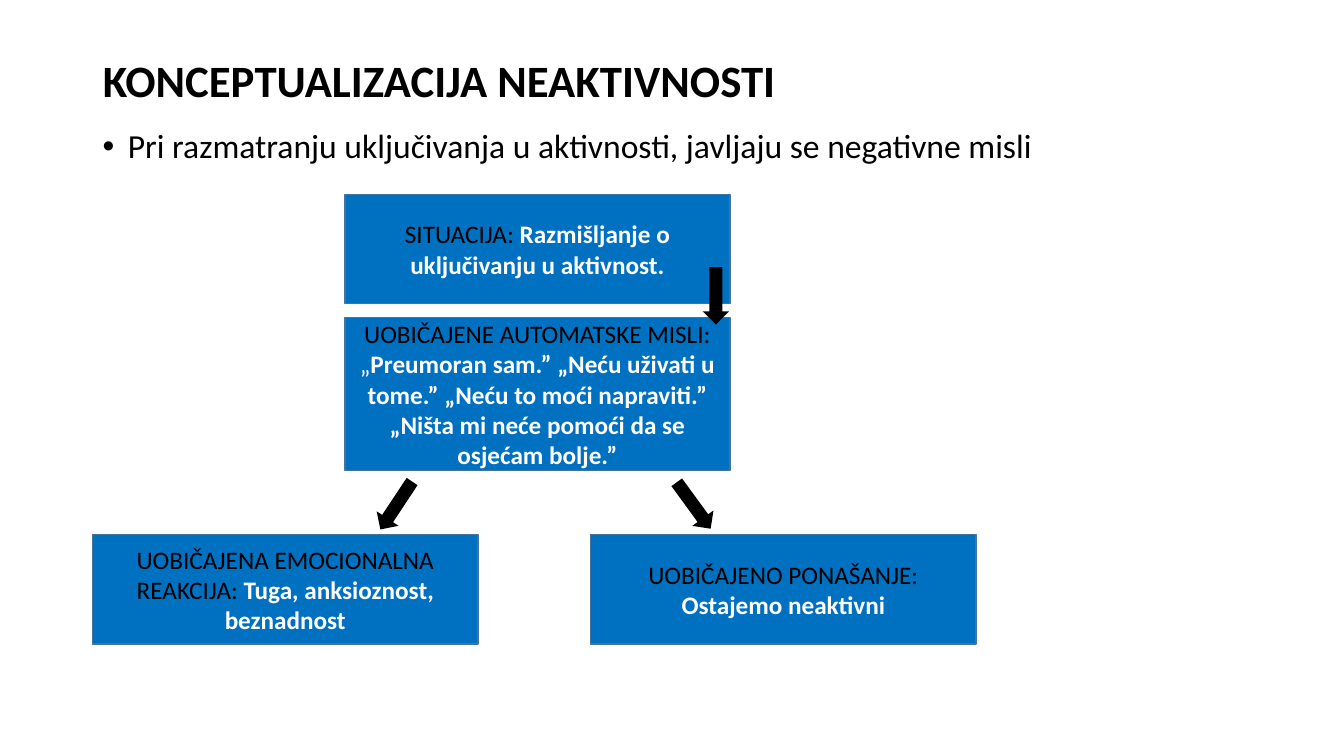
from lxml import etree
from pptx import Presentation
from pptx import util as u
from pptx.dml.color import RGBColor
from pptx.enum import shapes, text
from pptx.oxml.ns import qn

BLACK, WHITE, BLUE, EDGE = "000000", "FFFFFF", "0070C0", "43739E"


def colour(value):
    return RGBColor.from_string(value)


class Diagram:
    font_name = "Calibri"

    def __init__(self, presentation):
        self.column = presentation.slide_width / 100
        self.row = presentation.slide_height / 100
        self.slide = presentation.slides.add_slide(presentation.slide_layouts[5])

    def area(self, left, top, width, height):
        return (round(left * self.column), round(top * self.row),
                round(width * self.column), round(height * self.row))

    def style(self, paragraph, size, bold=False):
        font = paragraph.font
        font.name, font.size, font.bold = self.font_name, u.Pt(size), bold
        font.color.rgb = colour(BLACK)

    def title(self, words, *place):
        shape = self.slide.shapes.title
        shape.left, shape.top, shape.width, shape.height = self.area(*place)
        frame = shape.text_frame
        frame.text = words
        frame.auto_size = text.MSO_AUTO_SIZE.NONE
        frame.vertical_anchor = text.MSO_ANCHOR.MIDDLE
        paragraph = frame.paragraphs[0]
        paragraph.alignment = text.PP_ALIGN.LEFT
        paragraph.line_spacing = 0.9
        self.style(paragraph, 32, True)

    def bullet(self, words, *place):
        frame = self.slide.shapes.add_textbox(*self.area(*place)).text_frame
        frame.word_wrap = True
        frame.text = words
        paragraph = frame.paragraphs[0]
        paragraph.line_spacing = 0.9
        paragraph.space_before = u.Pt(10)
        self.style(paragraph, 24)
        properties = paragraph._p.get_or_add_pPr()
        properties.set("marL", str(u.Inches(0.25)))
        properties.set("indent", str(-u.Inches(0.25)))
        font = etree.Element(qn("a:buFont"), typeface="Arial")
        mark = etree.Element(qn("a:buChar"), char="•")
        properties.find(qn("a:defRPr")).addprevious(font)
        font.addnext(mark)

    def preset(self, kind, fill, place):
        shape = self.slide.shapes.add_shape(kind, *self.area(*place))
        shape.shadow.inherit = False
        shape.fill.solid()
        shape.fill.fore_color.rgb = colour(fill)
        return shape

    def box(self, runs, *place):
        shape = self.preset(shapes.MSO_SHAPE.RECTANGLE, BLUE, place)
        shape.line.color.rgb = colour(EDGE)
        shape.line.width = u.Pt(1)
        frame = shape.text_frame
        frame.word_wrap = True
        frame.vertical_anchor = text.MSO_ANCHOR.MIDDLE
        paragraph = frame.paragraphs[0]
        paragraph.alignment = text.PP_ALIGN.CENTER
        self.style(paragraph, 18)
        for words, ink, bold in runs:
            run = paragraph.add_run()
            run.text = words
            run.font.color.rgb = colour(ink)
            run.font.bold = bold

    def arrow(self, left, top, rotation=0):
        shape = self.preset(shapes.MSO_SHAPE.DOWN_ARROW, BLACK, (left, top, 1.95, 7.6))
        shape.line.fill.background()
        shape.rotation = rotation


def main():
    presentation = Presentation()
    presentation.slide_width = u.Inches(13.33)
    presentation.slide_height = u.Inches(7.5)
    diagram = Diagram(presentation)

    margin, centre, right = 6.9, 25.66, 43.96
    box_width, text_width = 28.66, 86.27
    lower_top, lower_height = 70.67, 14.53

    diagram.title("KONCEPTUALIZACIJA NEAKTIVNOSTI", margin, 5.33, text_width, 11.2)
    diagram.bullet("Pri razmatranju uključivanja u aktivnosti, javljaju se negativne misli",
                   margin, 16.53, text_width, 73.6)

    diagram.box([("SITUACIJA: ", BLACK, False),
                 ("Razmišljanje o uključivanju u aktivnost.", WHITE, True)],
                centre, 25.73, box_width, 14.4)
    diagram.box([("UOBIČAJENE AUTOMATSKE MISLI: ", BLACK, False),
                 ("„", WHITE, False),
                 ("Preumoran sam.” „Neću uživati u tome.” „Neću to moći napraviti.” "
                  "„Ništa mi neće pomoći da se osjećam bolje.”", WHITE, True)],
                centre, 42, box_width, 20.27)
    diagram.box([("UOBIČAJENA EMOCIONALNA REAKCIJA: ", BLACK, False),
                 ("Tuga, anksioznost, beznadnost", WHITE, True)],
                margin, lower_top, box_width, lower_height)
    diagram.box([("UOBIČAJENO PONAŠANJE: ", BLACK, False),
                 ("Ostajemo neaktivni", WHITE, True)],
                right, lower_top, box_width, lower_height)

    diagram.arrow(52.29, 35.33)
    diagram.arrow(28.51, 63.07, 33.5)
    diagram.arrow(50.64, 63.07, 323.9)

    presentation.save("out.pptx")


if __name__ == "__main__":
    main()
